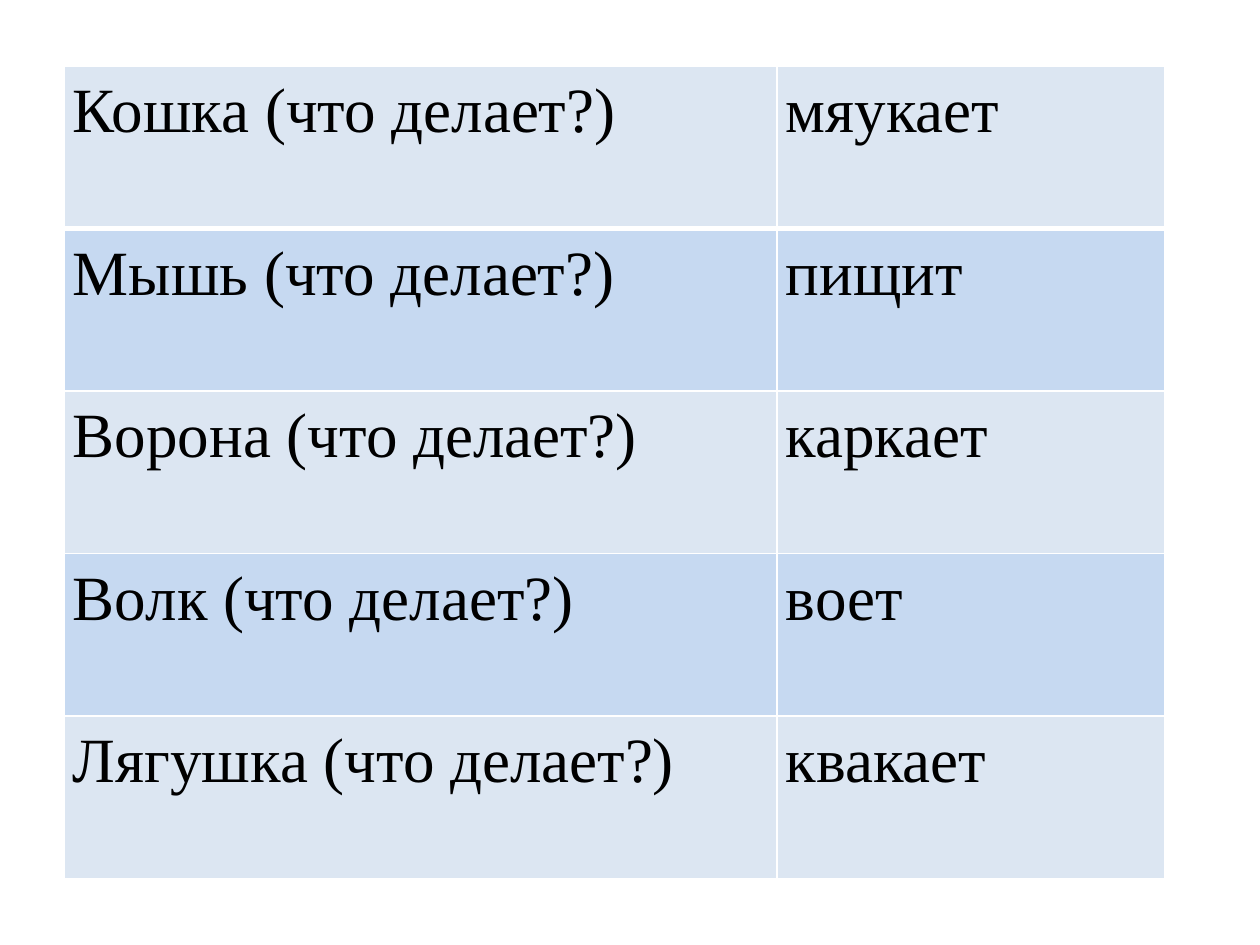
import pptx
import pptx.util
import pptx.dml.color
import pptx.enum.text
import pptx.oxml
import pptx.oxml.ns

RGB = pptx.dml.color.RGBColor
BLACK = RGB(0x00, 0x00, 0x00)
WHITE = RGB(0xFF, 0xFF, 0xFF)
PALE = RGB(0xDC, 0xE6, 0xF2)
BLUE = RGB(0xC6, 0xD9, 0xF1)

ASK = "(что делает?)"
VERBS = {
    "Кошка": "мяукает",
    "Мышь": "пищит",
    "Ворона": "каркает",
    "Волк": "воет",
    "Лягушка": "квакает",
}


def px(size):
    return pptx.util.Emu(round(size * 914400 / 126))


def apply(target, values):
    for name, value in values.items():
        setattr(target, name, value)


class Deck:
    font = {"name": "Times New Roman", "size": pptx.util.Pt(36), "bold": False}
    para = {"alignment": pptx.enum.text.PP_ALIGN.JUSTIFY, "line_spacing": 1.15}
    inset = {
        "margin_left": px(9),
        "margin_right": px(9),
        "margin_top": 0,
        "margin_bottom": 0,
    }

    def __init__(self, width, height):
        self.show = pptx.Presentation()
        apply(self.show, {"slide_width": px(width), "slide_height": px(height)})
        self.slide = self.show.slides.add_slide(self.show.slide_layouts[6])

    def edge(self, cell, side, width):
        line = pptx.oxml.parse_xml(
            f'<a:ln{side} {pptx.oxml.ns.nsdecls("a")} w="{pptx.util.Pt(width)}">'
            f'<a:solidFill><a:srgbClr val="{WHITE}"/></a:solidFill></a:ln{side}>'
        )
        cell._tc.get_or_add_tcPr().append(line)

    def cell(self, cell, text, fill, top, base):
        apply(cell, self.inset)
        for side, width in {"L": 1, "R": 1, "T": top, "B": base}.items():
            self.edge(cell, side, width)
        cell.fill.solid()
        cell.fill.fore_color.rgb = fill
        para = cell.text_frame.paragraphs[0]
        apply(para, self.para)
        run = para.add_run()
        run.text = text
        apply(run.font, self.font)
        run.font.color.rgb = BLACK

    def table(self, left, top, cols, height, rows):
        frame = self.slide.shapes.add_table(
            len(rows), len(cols), px(left), px(top), px(sum(cols)), px(height)
        )
        grid = frame.table
        for col, width in zip(grid.columns, cols):
            col.width = px(width)
        for i, texts in enumerate(rows):
            grid.rows[i].height = px(height / len(rows))
            fill = BLUE if i % 2 else PALE
            upper = 3 if i == 1 else 1
            lower = 3 if i == 0 else 1
            for j, text in enumerate(texts):
                self.cell(grid.cell(i, j), text, fill, upper, lower)


def main():
    deck = Deck(1260, 945)
    rows = [(f"{name} {ASK}", verb) for name, verb in VERBS.items()]
    deck.table(64, 66, [713, 388], 813, rows)
    deck.show.save("out.pptx")


if __name__ == "__main__":
    main()
